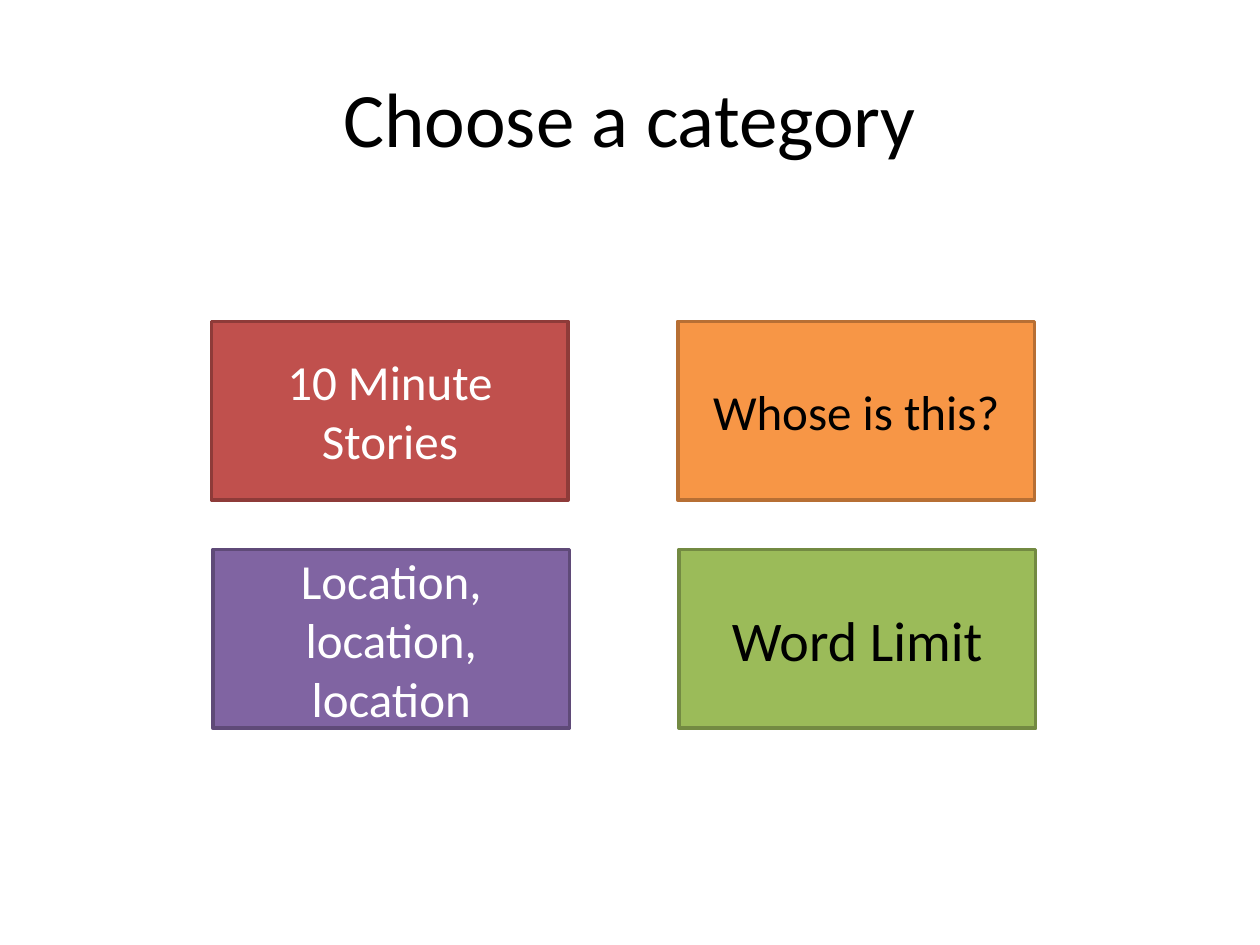
from pptx import Presentation
from pptx.dml.color import RGBColor
from pptx.enum.shapes import MSO_SHAPE
from pptx.enum.text import MSO_ANCHOR, PP_ALIGN
from pptx.util import Inches, Pt

# Card grid: first corner, steps between cards, and shift of the lower row
LEFT, TOP = 1.68, 2.55
STEP_X, STEP_Y = 3.7, 1.81
SHIFT = 0.01
WIDE, HIGH = 2.83, 1.42

# Column, row, label, fill, line, text colour, text size
CARDS = [
    (0, 0, "10 Minute Stories", "C0504D", "8E3B39", "FFFFFF", 28),
    (0, 1, "Location, location, location", "8064A2", "5F4A78", "FFFFFF", 28),
    (1, 0, "Whose is this?", "F79646", "B76F34", "000000", 28),
    (1, 1, "Word Limit", "9BBB59", "738A42", "000000", 32),
]


def color(code):
    return RGBColor.from_string(code)


def write(shape, text, size, code):
    frame = shape.text_frame
    frame.word_wrap = True
    frame.vertical_anchor = MSO_ANCHOR.MIDDLE
    para = frame.paragraphs[0]
    para.alignment = PP_ALIGN.CENTER
    run = para.add_run()
    run.text = text
    run.font.name = "Calibri"
    run.font.size = Pt(size)
    run.font.color.rgb = color(code)


def add_title(slide, text):
    box = slide.shapes.add_textbox(
        Inches(0.5), Inches(0.3), Inches(9), Inches(1.25))
    write(box, text, 44, "000000")


def add_card(slide, col, row, text, fill, line, ink, size):
    left = LEFT + col * STEP_X + row * SHIFT
    top = TOP + row * STEP_Y
    card = slide.shapes.add_shape(
        MSO_SHAPE.RECTANGLE,
        Inches(left), Inches(top), Inches(WIDE), Inches(HIGH))
    card.shadow.inherit = False
    card.fill.solid()
    card.fill.fore_color.rgb = color(fill)
    card.line.color.rgb = color(line)
    card.line.width = Pt(2)
    write(card, text, size, ink)


def main():
    deck = Presentation()
    deck.slide_width, deck.slide_height = Inches(10), Inches(7.5)
    slide = deck.slides.add_slide(deck.slide_layouts[6])

    # Heading
    add_title(slide, "Choose a category")

    # Category cards
    for card in CARDS:
        add_card(slide, *card)

    deck.save("out.pptx")


if __name__ == "__main__":
    main()
